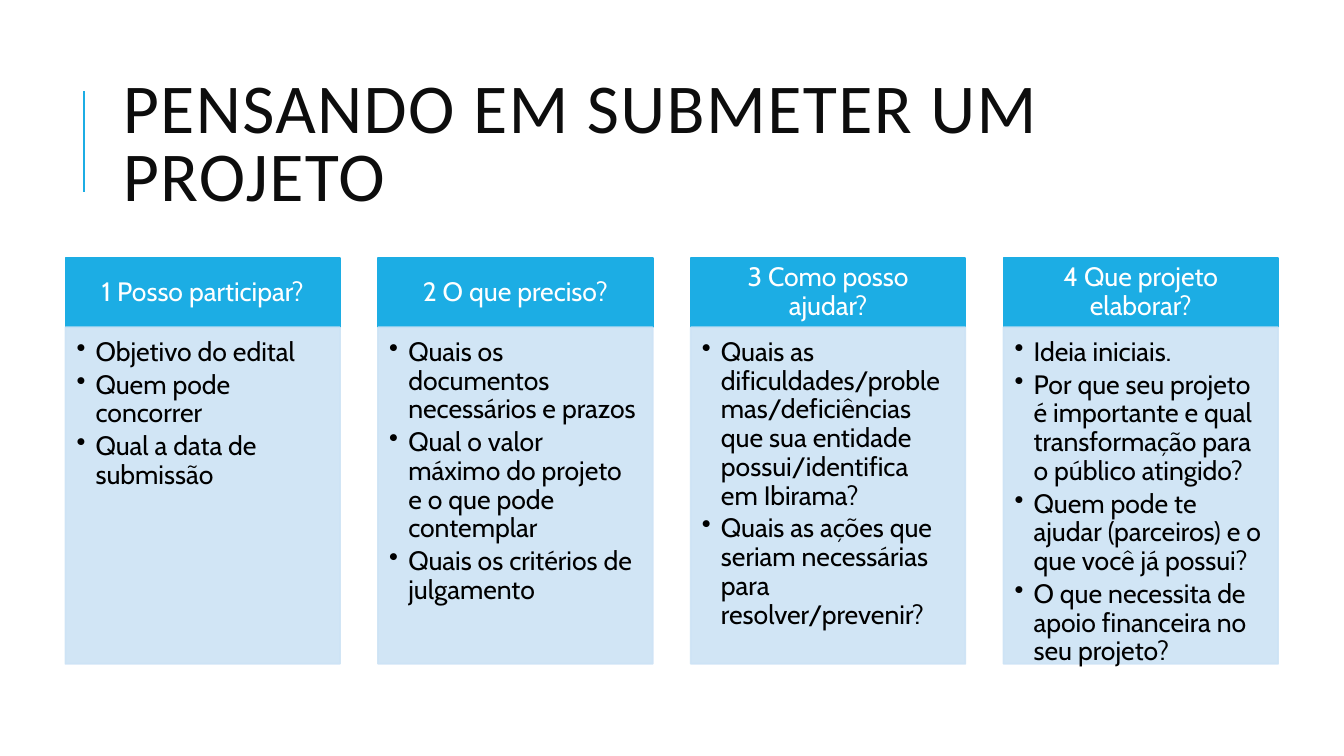
from dataclasses import dataclass

from lxml.etree import SubElement
from pptx import Presentation
from pptx.dml.color import RGBColor
from pptx.enum.shapes import MSO_CONNECTOR, MSO_SHAPE
from pptx.enum.text import MSO_ANCHOR, MSO_AUTO_SIZE, PP_ALIGN
from pptx.oxml.ns import qn
from pptx.shapes.autoshape import Shape
from pptx.slide import Slide
from pptx.util import Cm, Pt

COLORS = {
    "accent": "1CADE4",
    "panel": "CDE3F5",
    "title": "0D0D0D",
    "text": "000000",
    "white": "FFFFFF",
}
COLUMN_LEFT = 1.65
COLUMN_PITCH = 7.88
COLUMN_WIDTH = 6.92
HEADER_TOP = 6.5
HEADER_HEIGHT = 1.75
PANEL_HEIGHT = 8.48
BULLET_INDENT = 0.48


@dataclass
class Column:
    heading: str
    items: list[str]


COLUMNS = [
    Column("1 Posso participar?", [
        "Objetivo do edital",
        "Quem pode concorrer",
        "Qual a data de submissão",
    ]),
    Column("2 O que preciso?", [
        "Quais os documentos necessários e prazos",
        "Qual o valor máximo do projeto e o que pode contemplar",
        "Quais os critérios de julgamento",
    ]),
    Column("3 Como posso ajudar?", [
        "Quais as dificuldades/problemas/deficiências que sua entidade possui/identifica em Ibirama?",
        "Quais as ações que seriam necessárias para resolver/prevenir?",
    ]),
    Column("4 Que projeto elaborar?", [
        "Ideia iniciais.",
        "Por que seu projeto é importante e qual transformação para o público atingido?",
        "Quem pode te ajudar (parceiros) e o que você já possui?",
        "O que necessita de apoio financeira no seu projeto?",
    ]),
]


def color(name: str) -> RGBColor:
    return RGBColor.from_string(COLORS[name])


def style_font(font, name: str, size: float, color_name: str) -> None:
    font.name = name
    font.size = Pt(size)
    font.color.rgb = color(color_name)


def add_title(slide: Slide) -> None:
    title = slide.shapes.title
    title.left, title.top, title.width, title.height = Cm(2.84), Cm(1.63), Cm(27), Cm(4.17)
    frame = title.text_frame
    frame.text = "PENSANDO EM SUBMETER UM PROJETO"
    frame.word_wrap = True
    frame.auto_size = MSO_AUTO_SIZE.NONE
    frame.vertical_anchor = MSO_ANCHOR.MIDDLE
    paragraph = frame.paragraphs[0]
    paragraph.alignment = PP_ALIGN.LEFT
    paragraph.line_spacing = 0.8
    font = paragraph.runs[0].font
    style_font(font, "Calibri", 50, "title")
    paragraph.runs[0]._r.get_or_add_rPr().set("spc", "100")


def add_title_rule(slide: Slide) -> None:
    rule = slide.shapes.add_connector(
        MSO_CONNECTOR.STRAIGHT, Cm(2.12), Cm(4.83), Cm(2.12), Cm(2.29))
    rule.line.color.rgb = color("accent")
    rule.line.width = Pt(1.5)
    SubElement(rule._element.spPr, qn("a:effectLst"))


def add_box(slide: Slide, left: float, top: float, height: float, fill: str,
            margins: tuple[float, float, float, float], anchor: MSO_ANCHOR) -> Shape:
    box = slide.shapes.add_shape(
        MSO_SHAPE.RECTANGLE, Cm(left), Cm(top), Cm(COLUMN_WIDTH), Cm(height))
    box.shadow.inherit = False
    box.fill.solid()
    box.fill.fore_color.rgb = color(fill)
    box.line.color.rgb = color(fill)
    box.line.width = Pt(1.25)
    frame = box.text_frame
    frame.word_wrap = True
    frame.vertical_anchor = anchor
    frame.margin_left, frame.margin_top, frame.margin_right, frame.margin_bottom = map(Cm, margins)
    return box


def make_translucent(box: Shape, percent: int) -> None:
    for fill_color in box._element.spPr.iter(qn("a:srgbClr")):
        SubElement(fill_color, qn("a:alpha")).set("val", str(percent * 1000))


def write_paragraphs(box: Shape, lines: list[str], color_name: str,
                     alignment: PP_ALIGN, space_after: float, bulleted: bool) -> None:
    frame = box.text_frame
    frame.text = "\n".join(lines)
    for paragraph in frame.paragraphs:
        paragraph.alignment = alignment
        paragraph.line_spacing = 0.9
        paragraph.space_after = Pt(space_after)
        if bulleted:
            paragraph.level = 1
            properties = paragraph._p.get_or_add_pPr()
            properties.set("marL", str(Cm(BULLET_INDENT)))
            properties.set("indent", str(-Cm(BULLET_INDENT)))
            SubElement(properties, qn("a:buChar")).set("char", "•")
        style_font(paragraph.font, "Cabin", 19, color_name)


def add_column(slide: Slide, column: Column, left: float) -> None:
    header = add_box(slide, left, HEADER_TOP, HEADER_HEIGHT, "accent",
                     (0.38, 0.2, 0.38, 0.2), MSO_ANCHOR.MIDDLE)
    write_paragraphs(header, [column.heading], "white", PP_ALIGN.CENTER, 6.65, False)
    panel = add_box(slide, left, HEADER_TOP + HEADER_HEIGHT, PANEL_HEIGHT, "panel",
                    (0.28, 0.28, 0.38, 0.43), MSO_ANCHOR.TOP)
    make_translucent(panel, 90)
    write_paragraphs(panel, column.items, "text", PP_ALIGN.LEFT, 2.85, True)


def main() -> None:
    presentation = Presentation()
    presentation.slide_width = Cm(33.87)
    presentation.slide_height = Cm(19.05)
    slide = presentation.slides.add_slide(presentation.slide_layouts.get_by_name("Title Only"))
    add_title_rule(slide)
    add_title(slide)
    for index, column in enumerate(COLUMNS):
        add_column(slide, column, COLUMN_LEFT + index * COLUMN_PITCH)
    presentation.save("out.pptx")


if __name__ == "__main__":
    main()
